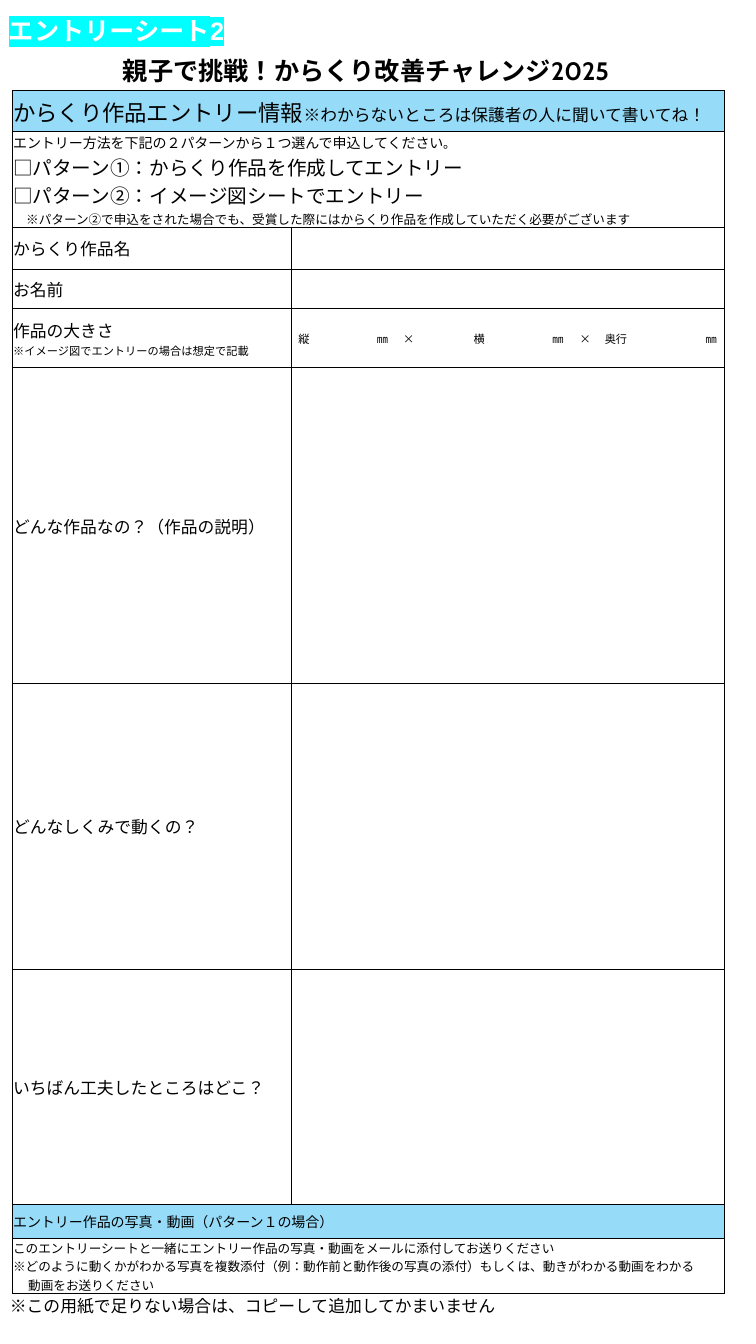
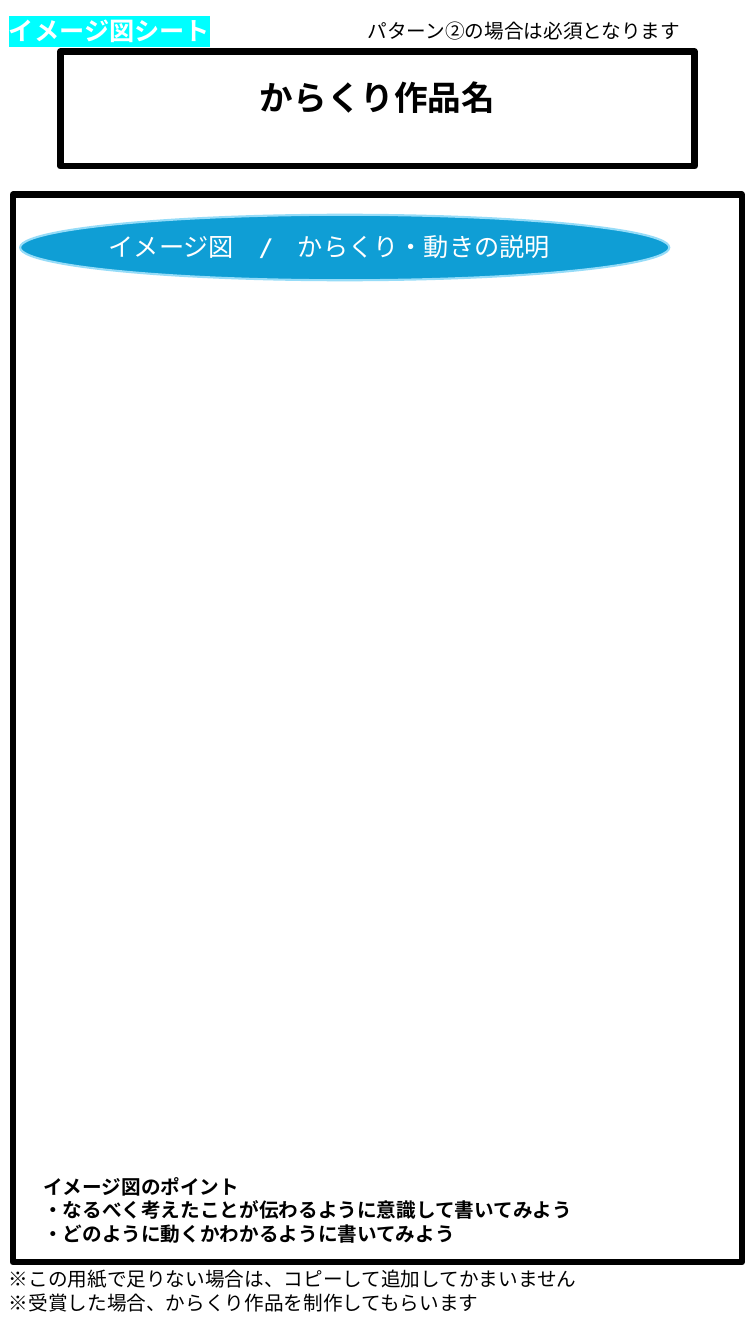
import lxml.etree
import pptx
import pptx.dml.color
import pptx.enum.lang
import pptx.enum.shapes
import pptx.enum.text
import pptx.oxml.ns
import pptx.util

Inches = pptx.util.Inches
Pt = pptx.util.Pt
qn = pptx.oxml.ns.qn

COLOURS = {
    "black": "000000",
    "white": "FFFFFF",
    "highlight": "00FFFF",
    "band": "96DCF8",
    "ellipse": "0F9ED5",
}
BODY_FONT = "Cabin"
TABLE_FONT = "Noto Sans CJK JP"
MORE_PAPER = "※この用紙で足りない場合は、コピーして追加してかまいません"


def write_paragraph(paragraph, pieces, latin=BODY_FONT, asian=BODY_FONT,
                    colour="black", bold=False, highlight=None):
    """Write (text, size) pieces; a size shared by all is set on the paragraph."""
    font = paragraph.font
    font.name = latin
    font.bold = bold
    font.color.rgb = pptx.dml.color.RGBColor.from_string(COLOURS[colour])
    font.language_id = pptx.enum.lang.MSO_LANGUAGE_ID.JAPANESE
    defaults = paragraph._p.pPr.find(qn("a:defRPr"))
    lxml.etree.SubElement(defaults, qn("a:ea"), typeface=asian)
    same_size = len({size for text, size in pieces}) == 1
    if same_size:
        font.size = Pt(pieces[0][1])
    for text, size in pieces:
        run = paragraph.add_run()
        run.text = text
        if not same_size:
            run.font.size = Pt(size)
        if highlight:
            marker = lxml.etree.SubElement(run._r.get_or_add_rPr(), qn("a:highlight"))
            lxml.etree.SubElement(marker, qn("a:srgbClr"), val=COLOURS[highlight])


def add_text(slide, box, lines, size, **style):
    shape = slide.shapes.add_textbox(*[Inches(length) for length in box])
    frame = shape.text_frame
    frame.word_wrap = True
    for index, line in enumerate(lines):
        paragraph = frame.add_paragraph() if index else frame.paragraphs[0]
        write_paragraph(paragraph, [(line, size)], **style)


presentation = pptx.Presentation()
presentation.slide_width = Inches(7.5)
presentation.slide_height = Inches(13.33)
blank_layout = presentation.slide_layouts[6]
entry_slide = presentation.slides.add_slide(blank_layout)
image_slide = presentation.slides.add_slide(blank_layout)

# Sheet labels
for slide, label, latin in [
    (entry_slide, "エントリーシート2", "Arial"),
    (image_slide, "イメージ図シート", BODY_FONT),
]:
    add_text(slide, (-0.01, 0.1, 4.48, 0.4), [label], 18, latin=latin,
             colour="white", bold=True, highlight="highlight")

# Entry form: row height, label lines, and whether the label spans the row
FORM_ROWS = [
    (0.4, [[("からくり作品エントリー情報", 16),
            ("※わからないところは保護者の人に聞いて書いてね！", 12)]], True),
    (0.95, [[("エントリー方法を下記の２パターンから１つ選んで申込してください", 10), ("。", 9)],
            [("□パターン①：からくり作品を作成してエントリー", 14)],
            [("□パターン②：イメージ図シートでエントリー", 14)],
            [("※パターン②で申込をされた場合でも、受賞した際にはからくり作品を作成していただく必要がございます", 9)]], True),
    (0.42, [[("からくり作品名", 12)]], False),
    (0.39, [[("お名前", 12)]], False),
    (0.58, [[("作品の大きさ", 12)],
            [("※イメージ図でエントリーの場合は想定で記載", 8)]], False),
    (3.14, [[("どんな作品なの？（作品の説明）", 12)]], False),
    (2.83, [[("どんなしくみで動くの？", 12)]], False),
    (2.34, [[("いちばん工夫したところはどこ？", 12)]], False),
    (0.33, [[("エントリー作品の写真・動画（パターン１の場合）", 10)]], True),
    (0.55, [[("このエントリーシートと一緒にエントリー作品の写真・動画をメールに添付してお送りください", 9)],
            [("※どのように動くかがわかる写真を複数添付（例：動作前と動作後の写真の添付）もしくは、動きがわかる動画をわかる", 9)],
            [("動画をお送りください", 9)]], True),
]
BAND_ROWS = {0, 8}
SIZE_ROW = 4
LINE_INDENTS = {(1, 3): 0.13, (9, 2): 0.15}
SIZE_FIELDS = [("縦", 0.06), ("㎜", 0.84), ("×", 1.1), ("横", 1.8),
               ("㎜", 2.58), ("×", 2.85), ("奥行", 3.1), ("㎜", 4.1)]

form = entry_slide.shapes.add_table(
    len(FORM_ROWS), 2, Inches(0.12), Inches(0.9), Inches(7.07), Inches(11.93)).table
form.first_row = False
form.horz_banding = False
form.columns[0].width = Inches(2.77)
form.columns[1].width = Inches(4.3)

for row, (height, lines, spans) in enumerate(FORM_ROWS):
    form.rows[row].height = Inches(height)
    for column in range(2):
        cell = form.cell(row, column)
        cell.vertical_anchor = pptx.enum.text.MSO_ANCHOR.MIDDLE
        cell.margin_left = cell.margin_right = cell.margin_top = Inches(0.01)
        cell.margin_bottom = 0
        cell.fill.solid()
        cell.fill.fore_color.rgb = pptx.dml.color.RGBColor.from_string(
            COLOURS["band" if row in BAND_ROWS else "white"])
        properties = cell._tc.get_or_add_tcPr()
        for position, side in enumerate(["lnL", "lnR", "lnT", "lnB"]):
            border = lxml.etree.Element(qn("a:" + side), w=str(Pt(0.5)))
            fill = lxml.etree.SubElement(border, qn("a:solidFill"))
            lxml.etree.SubElement(fill, qn("a:srgbClr"), val=COLOURS["black"])
            properties.insert(position, border)
    if spans:
        form.cell(row, 0).merge(form.cell(row, 1))
    frame = form.cell(row, 0).text_frame
    for index, pieces in enumerate(lines):
        paragraph = frame.add_paragraph() if index else frame.paragraphs[0]
        if (row, index) in LINE_INDENTS:
            paragraph._p.get_or_add_pPr().set("marL", str(Inches(LINE_INDENTS[row, index])))
        write_paragraph(paragraph, pieces, latin=TABLE_FONT, asian=TABLE_FONT)

size_paragraph = form.cell(SIZE_ROW, 1).text_frame.paragraphs[0]
tab_list = lxml.etree.SubElement(size_paragraph._p.get_or_add_pPr(), qn("a:tabLst"))
for text, position in SIZE_FIELDS:
    lxml.etree.SubElement(tab_list, qn("a:tab"), pos=str(Inches(position)), algn="l")
size_text = "".join("\t" + text for text, position in SIZE_FIELDS)
write_paragraph(size_paragraph, [(size_text, 8)], latin=TABLE_FONT, asian=TABLE_FONT)

add_text(entry_slide, (0, 12.8, 8.31, 0.3), [MORE_PAPER], 12)
add_text(entry_slide, (1.12, 0.5, 5.25, 0.4),
         ["親子で挑戦！からくり改善チャレンジ2025"], 18, bold=True)

# Image sheet: frames and heading ellipse
RECTANGLE = pptx.enum.shapes.MSO_SHAPE.RECTANGLE
OVAL = pptx.enum.shapes.MSO_SHAPE.OVAL
image_shapes = []
for preset, box, fill, line, width in [
    (RECTANGLE, (0.6, 0.51, 6.29, 1.14), None, "black", 4.5),
    (RECTANGLE, (0.13, 1.93, 7.23, 10.59), None, "black", 4.5),
    (OVAL, (0.2, 2.13, 6.44, 0.65), "ellipse", "band", 1.5),
]:
    shape = image_slide.shapes.add_shape(preset, *[Inches(length) for length in box])
    shape.shadow.inherit = False
    if fill:
        shape.fill.solid()
        shape.fill.fore_color.rgb = pptx.dml.color.RGBColor.from_string(COLOURS[fill])
    else:
        shape.fill.background()
    shape.line.color.rgb = pptx.dml.color.RGBColor.from_string(COLOURS[line])
    shape.line.width = Pt(width)
    lxml.etree.SubElement(shape.line._get_or_add_ln(), qn("a:round"))
    image_shapes.append(shape)

name_frame = image_shapes[0].text_frame
name_frame.vertical_anchor = pptx.enum.text.MSO_ANCHOR.TOP
name_paragraph = name_frame.paragraphs[0]
name_paragraph.alignment = pptx.enum.text.PP_ALIGN.CENTER
name_paragraph.line_spacing = 1.5
write_paragraph(name_paragraph, [("からくり作品名", 24)], bold=True)

add_text(image_slide, (0.98, 2.25, 4.82, 0.4),
         ["イメージ図　/　からくり・動きの説明"], 18, colour="white")
add_text(image_slide, (-0.01, 12.52, 8.94, 0.57),
         [MORE_PAPER, "※受賞した場合、からくり作品を制作してもらいます"], 14)
add_text(image_slide, (3.55, 0.14, 4.5, 0.34), ["パターン②の場合は必須となります"], 14)
add_text(image_slide, (0.33, 11.6, 6.17, 0.81),
         ["イメージ図のポイント",
          "・なるべく考えたことが伝わるように意識して書いてみよう",
          "・どのように動くかわかるように書いてみよう"], 14, bold=True)

presentation.save("out.pptx")
